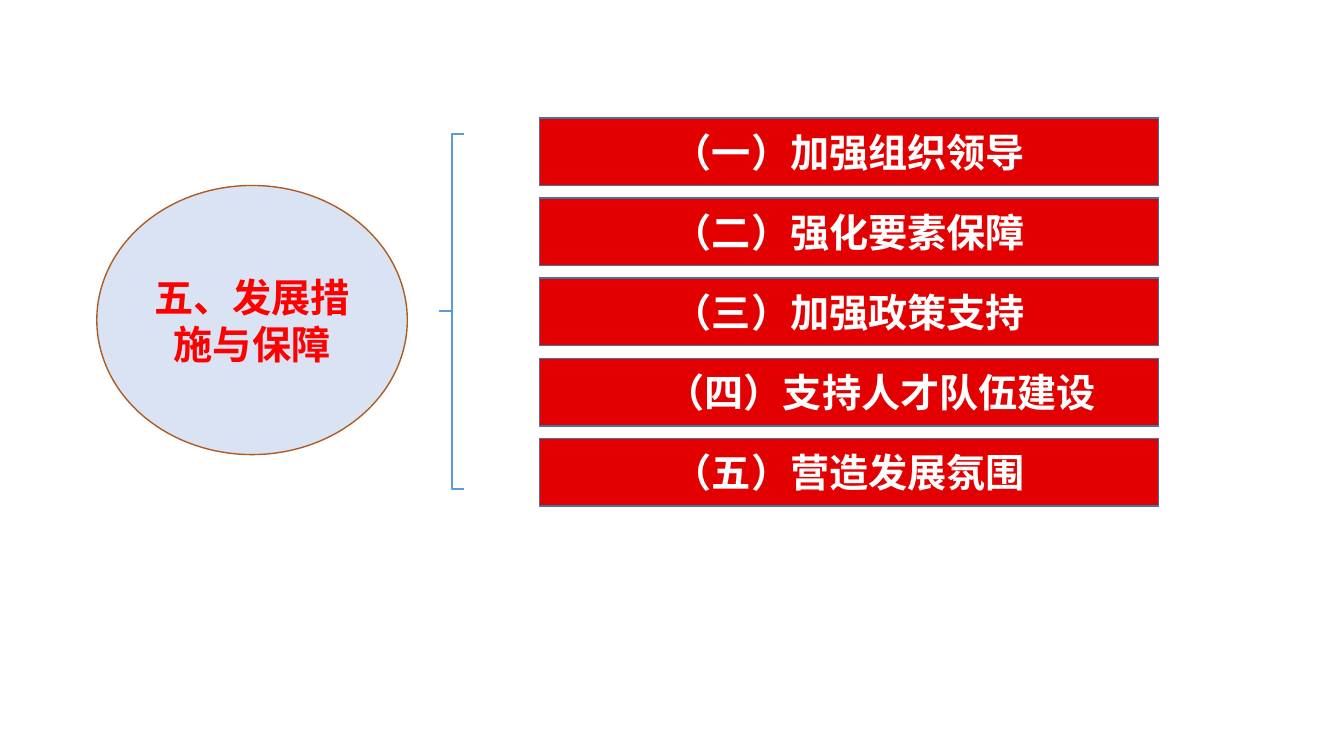
import dataclasses

import pptx
import pptx.dml.color
import pptx.enum.shapes
import pptx.enum.text
import pptx.util

Inches = pptx.util.Inches
SHAPE = pptx.enum.shapes.MSO_SHAPE


@dataclasses.dataclass(frozen=True)
class Theme:
    """Colours, font and sizes of the slide."""
    bar: str = "E30000"
    bar_edge: str = "760303"
    bar_line: str = "43739E"
    bar_text: str = "FFFFFF"
    brace: str = "5B9BD5"
    topic: str = "DAE3F3"
    topic_line: str = "AF5C24"
    topic_text: str = "FF0000"
    font: str = "Calibri"
    size: int = 28


THEME = Theme()
TOPIC = "五、发展措施与保障"
MEASURES = [
    ("（一）加强组织领导", 0.1),
    ("（二）强化要素保障", 0.1),
    ("（三）加强政策支持", 0.1),
    ("（四）支持人才队伍建设", 0.73),
    ("（五）营造发展氛围", 0.1),
]


def rgb(value):
    """Return a colour from its hex value."""
    return pptx.dml.color.RGBColor.from_string(value)


def add_outlined(slide, kind, box, line, width=1):
    """Add a preset shape without shadow and with a plain outline."""
    sp = slide.shapes.add_shape(kind, *map(Inches, box))
    sp.shadow.inherit = False
    sp.line.color.rgb = rgb(line)
    sp.line.width = pptx.util.Pt(width)
    return sp


def write_label(sp, text, color):
    """Write one bold centred line of text in a shape."""
    tf = sp.text_frame
    tf.word_wrap = True
    tf.vertical_anchor = pptx.enum.text.MSO_ANCHOR.MIDDLE
    p = tf.paragraphs[0]
    p.alignment = pptx.enum.text.PP_ALIGN.CENTER
    r = p.add_run()
    r.text = text
    formats = {"name": THEME.font, "size": pptx.util.Pt(THEME.size), "bold": True}
    for name, value in formats.items():
        setattr(r.font, name, value)
    r.font.color.rgb = rgb(color)


def add_topic(slide, box):
    """Draw the topic ellipse."""
    sp = add_outlined(slide, SHAPE.OVAL, box, THEME.topic_line)
    sp.fill.solid()
    sp.fill.fore_color.rgb = rgb(THEME.topic)
    write_label(sp, TOPIC, THEME.topic_text)


def add_brace(slide, box):
    """Draw the square brace that leads to the measures."""
    sp = add_outlined(slide, SHAPE.LEFT_BRACE, box, THEME.brace, 1.5)
    sp.fill.background()
    sp.adjustments[0] = 0
    sp.adjustments[1] = 0.5


def add_measures(slide, box, bar_height=0.67):
    """Stack the measure bars evenly over the height of the box."""
    left, top, width, height = box
    step = (height - bar_height) / (len(MEASURES) - 1)
    for i, (text, inset) in enumerate(MEASURES):
        bar = (left, top + i * step, width, bar_height)
        sp = add_outlined(slide, SHAPE.FLOWCHART_PROCESS, bar, THEME.bar_line)
        sp.fill.gradient()
        sp.fill.gradient_angle = 270
        stops = ((0.99, THEME.bar), (1, THEME.bar_edge))
        for stop, (position, color) in zip(sp.fill.gradient_stops, stops):
            stop.position = position
            stop.color.rgb = rgb(color)
        write_label(sp, text, THEME.bar_text)
        sp.text_frame.margin_left = Inches(inset)


def main():
    """Build and save the slide."""
    prs = pptx.Presentation()
    prs.slide_width = Inches(13.33)
    prs.slide_height = Inches(7.5)
    slide = prs.slides.add_slide(prs.slide_layouts[6])
    add_measures(slide, (5.35, 1.17, 6.14, 3.85))
    add_brace(slide, (4.36, 1.33, 0.24, 3.52))
    add_topic(slide, (0.96, 1.84, 3.08, 2.67))
    prs.save("out.pptx")


if __name__ == "__main__":
    main()
